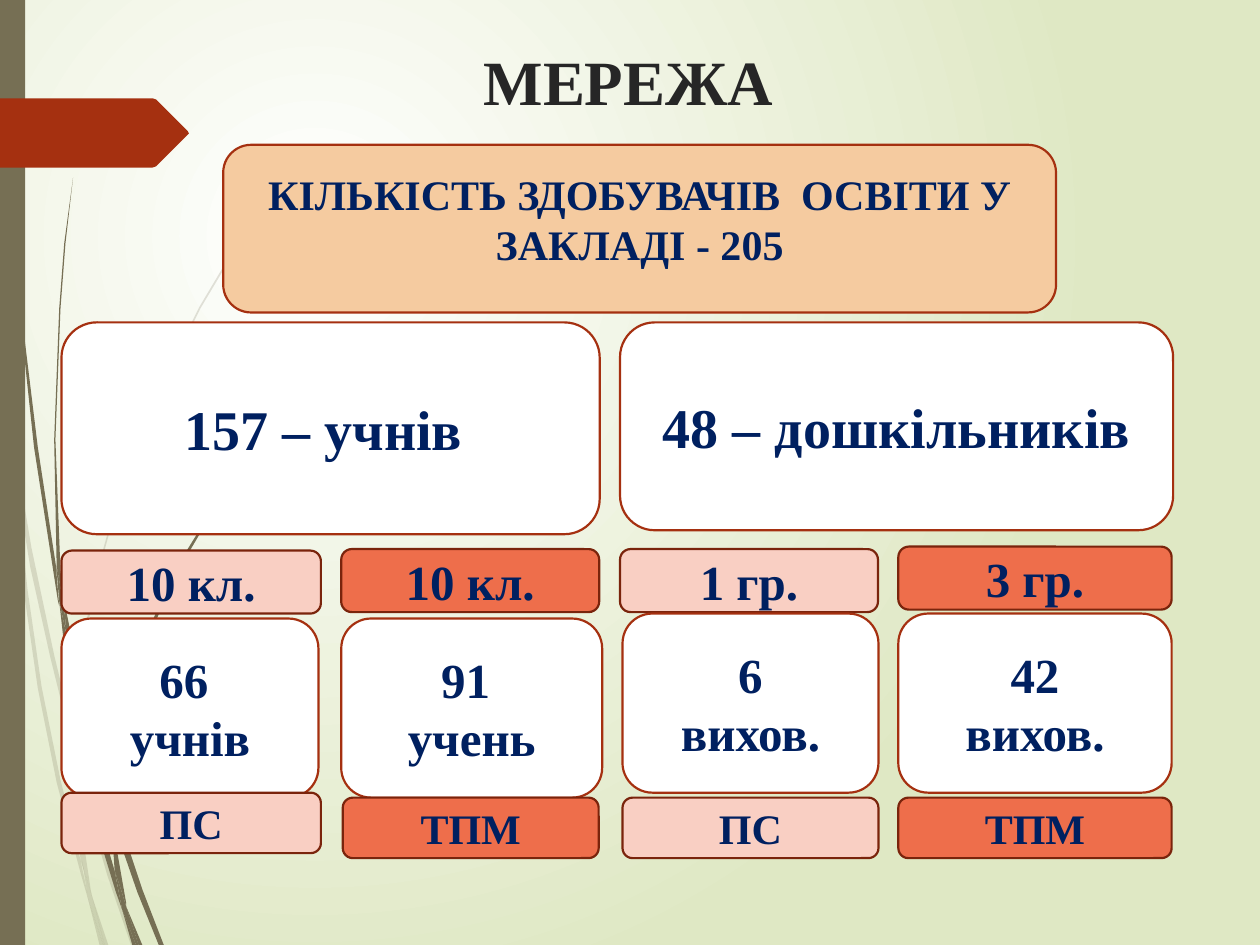
from pptx import Presentation
from pptx.dml.color import RGBColor
from pptx.enum.shapes import MSO_SHAPE as SHAPE
from pptx.enum.text import MSO_ANCHOR as ANCHOR, PP_ALIGN as ALIGN
from pptx.oxml import parse_xml
from pptx.oxml.ns import nsdecls, qn
from pptx.util import Cm, Pt

WHITE = RGBColor(0xFF, 0xFF, 0xFF)
GREEN = RGBColor(0xDF, 0xE8, 0xC4)
OLIVE = RGBColor(0x76, 0x6F, 0x54)
RUST = RGBColor(0xA5, 0x30, 0x10)
BROWN = RGBColor(0x7A, 0x24, 0x0C)
PEACH = RGBColor(0xF5, 0xCB, 0xA0)
PINK = RGBColor(0xF9, 0xCF, 0xC3)
CORAL = RGBColor(0xEE, 0x6E, 0x4B)
NAVY = RGBColor(0x00, 0x20, 0x60)
INK = RGBColor(0x26, 0x26, 0x26)

# Outlines of the grass blades, in units of 0.0254 cm
PALE_BLADES = [
    [(8, 350), (6, 322), (0, 282), (0, 299), (7, 344)],
    [(40, 522), (59, 599), (59, 586), (43, 520), (25, 435), (10, 345), (12, 376), (24, 450)],
    [(64, 607), (61, 596), (61, 610), (85, 694), (104, 750), (108, 750), (88, 692)],
    [(83, 750), (86, 750), (73, 711)],
    [(64, 683), (48, 619), (33, 545), (22, 469), (12, 376), (8, 350), (19, 470),
     (30, 546), (45, 621), (64, 693), (70, 714), (69, 707)],
    [(58, 599), (60, 646), (64, 683), (67, 692), (73, 711), (72, 706), (63, 646), (61, 610)],
    [(61, 584), (65, 523), (76, 462), (92, 404), (111, 349), (134, 296), (159, 245),
     (187, 198), (201, 175), (217, 154), (217, 153), (201, 175), (186, 197), (158, 244),
     (133, 295), (110, 348), (91, 403), (75, 461), (63, 522), (59, 584), (61, 596)],
    [(70, 714), (79, 750), (82, 750)],
    [(67, 692), (65, 683), (69, 707), (70, 714), (82, 750), (83, 750), (73, 711)],
]
DARK_BLADES = [
    [(5, 110), (14, 233), (27, 355), (46, 477), (47, 481), (45, 457), (45, 453), (30, 355),
     (15, 232), (6, 109), (4, 48), (3, 0), (2, 0), (3, 48)],
    [(73, 592), (88, 645), (88, 633), (77, 590), (62, 532), (50, 472), (53, 505), (62, 549)],
    [(94, 649), (91, 641), (91, 656), (109, 708), (126, 750), (130, 750), (113, 706)],
    [(91, 691), (81, 657), (69, 607), (60, 556), (53, 505), (47, 477), (56, 557), (65, 608),
     (77, 659), (92, 708), (97, 722), (96, 717)],
    [(50, 472), (48, 453), (44, 349), (48, 245), (52, 193), (58, 141), (51, 193), (47, 245),
     (43, 349), (45, 449), (49, 472)],
    [(110, 750), (113, 750), (100, 719)],
    [(47, 477), (53, 505), (50, 472), (49, 472), (45, 449), (45, 453)],
    [(91, 633), (95, 592), (103, 552), (115, 513), (131, 476), (149, 440), (169, 406),
     (191, 374), (203, 359), (216, 344), (215, 344), (203, 358), (191, 373), (168, 405),
     (147, 439), (129, 474), (113, 512), (101, 551), (92, 591), (88, 631), (91, 641)],
    [(97, 722), (105, 750), (108, 750)],
    [(88, 645), (91, 691), (96, 706), (100, 719), (100, 716), (93, 676), (91, 656), (90, 651)],
    [(96, 706), (91, 691), (96, 717), (97, 722), (108, 750), (110, 750), (100, 719)],
]
TAG = [(0, 78), (121, 78), (124, 79), (149, 104), (150, 105.5), (149, 107), (124, 132),
       (121, 133), (0, 133)]

# Each part: left, top, width, text
COLUMNS = [
    (PINK, (1.24, 11.1, 5.23, "10 кл."), (1.24, 12.47, 5.18, "66 ", "учнів"),
     (1.24, 15.98, 5.23, "ПС")),
    (CORAL, (6.88, 11.07, 5.2, "10 кл."), (6.88, 12.47, 5.26, "91 ", "учень"),
     (6.91, 16.08, 5.16, "ТПМ")),
    (PINK, (12.5, 11.07, 5.2, "1 гр."), (12.55, 12.37, 5.16, "6", "вихов."),
     (12.55, 16.08, 5.16, "ПС")),
    (CORAL, (18.11, 11.02, 5.51, "3 гр."), (18.11, 12.37, 5.51, "42", "вихов."),
     (18.11, 16.08, 5.51, "ТПМ")),
]


class Deck:
    font = "Times New Roman"
    line_width = Pt(1.25)

    def __init__(self, prs):
        self.s = prs.slides.add_slide(prs.slide_layouts[6])

    def background(self, inner, outer):
        """Radial gradient centred in the upper left."""
        fill = self.s.background.fill
        fill.gradient()
        for stop, color in zip(fill.gradient_stops, (inner, outer)):
            stop.color.rgb = color
        grad = self.s.element.find(".//" + qn("a:gradFill"))
        grad.replace(grad.find(qn("a:lin")), parse_xml(
            f'<a:path {nsdecls("a")} path="circle">'
            '<a:fillToRect l="50000" t="50000" r="100000" b="100000"/></a:path>'))

    def paint(self, sp, color, line=None):
        sp.shadow.inherit = False
        sp.fill.solid()
        sp.fill.fore_color.rgb = color
        if line is None:
            sp.line.fill.background()
        else:
            sp.line.color.rgb = line
            sp.line.width = self.line_width

    def outline(self, points, color, opacity=None):
        builder = self.s.shapes.build_freeform(*points[0], scale=Cm(0.0254))
        builder.add_line_segments(points[1:], close=True)
        sp = builder.convert_to_shape()
        self.paint(sp, color)
        if opacity is not None:
            clr = sp.element.spPr.find(".//" + qn("a:srgbClr"))
            clr.append(parse_xml(f'<a:alpha {nsdecls("a")} val="{opacity * 1000}"/>'))

    def bar(self, x, y, w, h, color):
        sp = self.s.shapes.add_shape(SHAPE.RECTANGLE, Cm(x), Cm(y), Cm(w), Cm(h))
        self.paint(sp, color)

    def add_text(self, tf, lines, size, color, align):
        tf.word_wrap = True
        for i, line in enumerate(lines):
            p = tf.paragraphs[0] if i == 0 else tf.add_paragraph()
            p.alignment = align
            r = p.add_run()
            r.text = line
            r.font.name = self.font
            r.font.size = Pt(size)
            r.font.bold = True
            r.font.color.rgb = color

    def title(self, x, y, w, h, text):
        tf = self.s.shapes.add_textbox(Cm(x), Cm(y), Cm(w), Cm(h)).text_frame
        self.add_text(tf, [text], 36, INK, ALIGN.LEFT)

    def card(self, x, y, w, h, lines, size, color, line=RUST, bottom=0.13):
        sp = self.s.shapes.add_shape(SHAPE.ROUNDED_RECTANGLE, Cm(x), Cm(y), Cm(w), Cm(h))
        self.paint(sp, color, line)
        tf = sp.text_frame
        tf.vertical_anchor = ANCHOR.MIDDLE
        tf.margin_bottom = Cm(bottom)
        self.add_text(tf, lines, size, NAVY, ALIGN.CENTER)


def main():
    prs = Presentation()
    prs.slide_width, prs.slide_height = Cm(25.4), Cm(19.05)
    deck = Deck(prs)
    deck.background(WHITE, GREEN)
    for blade in PALE_BLADES:
        deck.outline(blade, OLIVE, opacity=20)
    for blade in DARK_BLADES:
        deck.outline(blade, OLIVE)
    deck.bar(0, 0, 0.51, 19.05, OLIVE)
    deck.outline(TAG, RUST)

    deck.title(9.5, 0.74, 10, 3, "МЕРЕЖА")
    deck.card(4.5, 2.92, 16.79, 3.38, ["КІЛЬКІСТЬ ЗДОБУВАЧІВ  ОСВІТИ У ЗАКЛАДІ - 205"],
              24, PEACH, bottom=0.53)
    deck.card(1.24, 6.5, 10.85, 4.27, ["157 – учнів "], 32, WHITE)
    deck.card(12.5, 6.5, 11.15, 4.19, ["48 – дошкільників"], 32, WHITE)
    for color, label, count, kind in COLUMNS:
        for (x, y, w, *lines), h, size, fill, line in (
                (label, 1.27, 28, color, BROWN),
                (count, 3.61, 28, WHITE, RUST),
                (kind, 1.22, 24, color, BROWN)):
            deck.card(x, y, w, h, lines, size, fill, line)
    prs.save("out.pptx")


if __name__ == "__main__":
    main()
